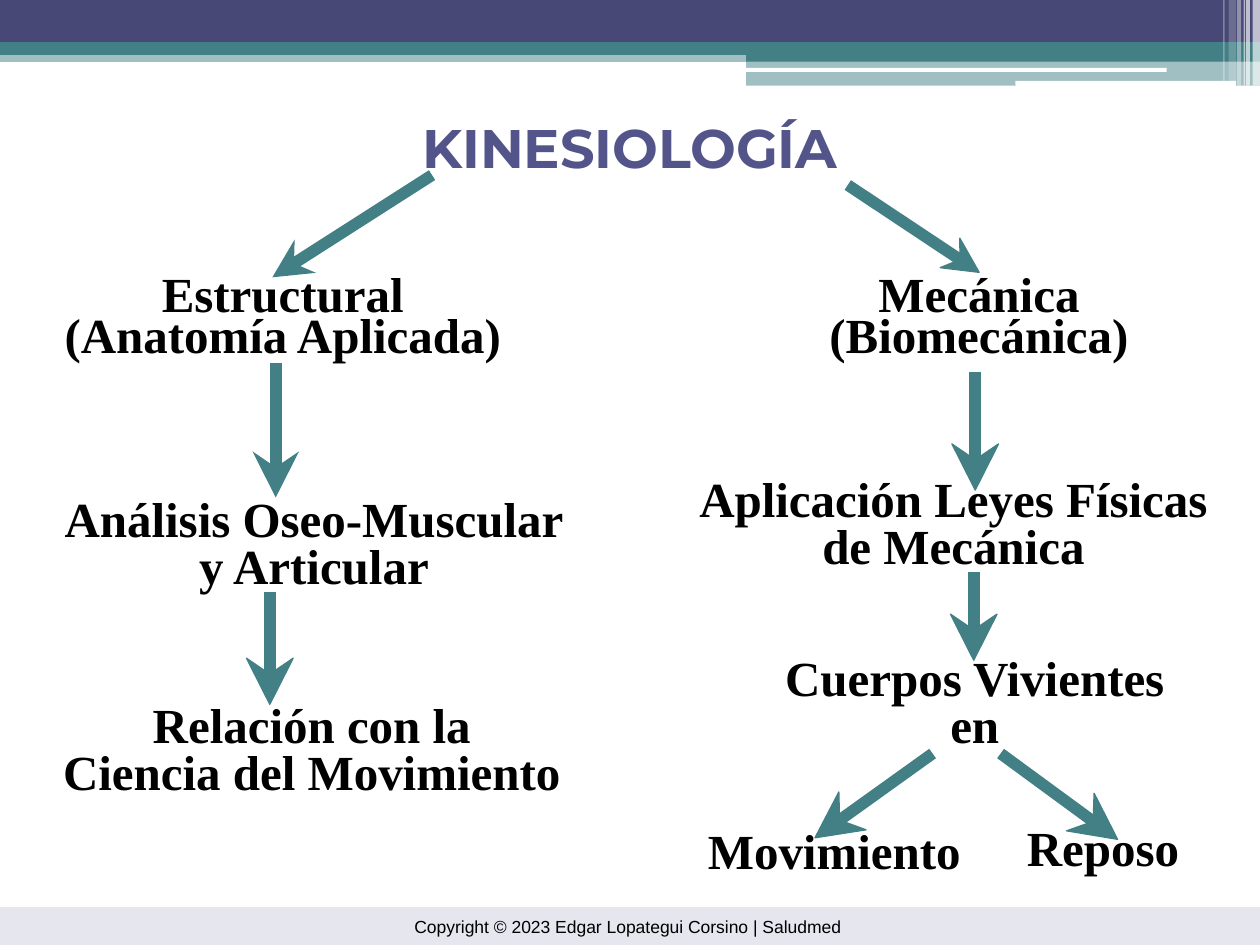
import math
from lxml import etree
from pptx import Presentation
from pptx.dml.color import RGBColor
from pptx.enum import shapes, text
from pptx.oxml.ns import qn
from pptx.util import Cm, Pt

TEAL = RGBColor(0x43, 0x80, 0x86)
NAVY = RGBColor(0x48, 0x48, 0x76)
VIOLET = RGBColor(0x53, 0x54, 0x8A)
LAVENDER = RGBColor(0xE6, 0xE6, 0xEF)
WHITE = RGBColor(0xFF, 0xFF, 0xFF)
BLACK = RGBColor(0, 0, 0)
RECT = shapes.MSO_SHAPE.RECTANGLE
ROUND = shapes.MSO_SHAPE.ROUNDED_RECTANGLE


def add_run(p, words, size, font, color, bold=True):
    r = p.add_run()
    r.text = words
    r.font.size = Pt(size)
    r.font.name = font
    r.font.bold = bold
    r.font.color.rgb = color


def zero_margins(tf):
    tf.margin_left = tf.margin_top = tf.margin_right = tf.margin_bottom = 0
    tf.word_wrap = False
    tf.vertical_anchor = text.MSO_ANCHOR.TOP
    tf.auto_size = text.MSO_AUTO_SIZE.SHAPE_TO_FIT_TEXT


prs = Presentation()
prs.slide_width, prs.slide_height = Cm(25.4), Cm(19.05)
s = prs.slides.add_slide(prs.slide_layouts[5])

bands = [
    (RECT, 0, 1.02, 25.4, 0.23, TEAL, 50),
    (RECT, 0, 0, 25.4, 0.87, NAVY, 100),
    (RECT, 0, 0.85, 25.4, 0.26, TEAL, 100),
    (RECT, 15.04, 0.99, 10.36, 0.25, TEAL, 100),
    (RECT, 15.04, 1.22, 10.36, 0.51, TEAL, 50),
    (ROUND, 15.01, 1.37, 8.51, 0.08, WHITE, 100),
    (ROUND, 20.47, 1.63, 4.45, 0.1, WHITE, 100),
    (RECT, 25.25, 0, 0.15, 1.73, WHITE, 65),
    (RECT, 25.12, 0, 0.08, 1.73, WHITE, 65),
    (RECT, 25.07, 0, 0.03, 1.73, WHITE, 60),
    (RECT, 24.94, 0, 0.08, 1.73, WHITE, 40),
    (RECT, 24.77, 0, 0.15, 1.63, WHITE, 20),
    (RECT, 24.66, 0, 0.03, 1.63, WHITE, 30),
    (RECT, 0, 18.29, 25.4, 0.76, LAVENDER, 100),
]
for kind, left, top, width, height, color, opacity in bands:
    sp = s.shapes.add_shape(kind, Cm(left), Cm(top), Cm(width), Cm(height))
    sp.shadow.inherit = False
    sp.fill.solid()
    sp.fill.fore_color.rgb = color
    sp.line.fill.background()
    if opacity < 100:
        clr = sp.fill._xPr.find(qn("a:solidFill"))[0]
        etree.SubElement(clr, qn("a:alpha")).set("val", str(opacity * 1000))

footer = sp.text_frame
footer.vertical_anchor = text.MSO_ANCHOR.MIDDLE
p = footer.paragraphs[0]
p.alignment = text.PP_ALIGN.CENTER
add_run(p, "Copyright © 2023 Edgar Lopategui Corsino | Saludmed ", 10, "Arial", BLACK, False)

labels = [
    (1.27, 5.64, 8.86, 1.65, 0.7, ["Estructural", "(Anatomía Aplicada)"]),
    (16.71, 5.64, 6.05, 1.65, 0.7, ["Mecánica", "(Biomecánica)"]),
    (1.3, 10.08, 10.06, 1.91, 0.8, ["Análisis Oseo-Muscular", "y Articular"]),
    (1.27, 14.22, 10.03, 1.91, 0.8, ["Relación con la", "Ciencia del Movimiento"]),
    (14, 9.68, 10.44, 1.91, 0.8, ["Aplicación Leyes Físicas", "de Mecánica"]),
    (15.8, 13.28, 7.7, 1.91, 0.8, ["Cuerpos Vivientes", "en"]),
    (14.27, 16.54, 5.11, 1.19, 1.0, ["Movimiento"]),
    (20.7, 16.48, 3.07, 1.19, 1.0, ["Reposo"]),
]
for left, top, width, height, spacing, lines in labels:
    tf = s.shapes.add_textbox(Cm(left), Cm(top), Cm(width), Cm(height)).text_frame
    zero_margins(tf)
    for i, words in enumerate(lines):
        p = tf.add_paragraph() if i else tf.paragraphs[0]
        p.alignment = text.PP_ALIGN.CENTER if len(lines) > 1 else text.PP_ALIGN.LEFT
        p.line_spacing = spacing
        add_run(p, words, 28, "Times New Roman", BLACK)

arrows = [
    (8.71, 3.53, 5.49, 5.59, 0.85, False),
    (5.56, 7.32, 5.56, 10.03, 1, False),
    (5.44, 11.94, 5.44, 14.2, 1, True),
    (19.66, 7.49, 19.66, 9.88, 1, True),
    (19.63, 11.53, 19.63, 13.31, 1, True),
    (18.8, 15.19, 16.43, 16.89, 1, True),
    (20.17, 15.19, 22.53, 16.92, 1, True),
    (17.09, 3.73, 19.74, 5.49, 0.76, True),
]
for x1, y1, x2, y2, scale, outlined in arrows:
    length = math.hypot(x2 - x1, y2 - y1)
    dx, dy = (x2 - x1) / length * scale, (y2 - y1) / length * scale
    notch = Cm(x2 - 0.61 * dx), Cm(y2 - 0.61 * dy)
    barbs = [(Cm(x2 - 0.93 * dx - side * dy), Cm(y2 - 0.93 * dy + side * dx))
             for side in (-0.47, 0.47)]

    shaft = s.shapes.add_connector(shapes.MSO_CONNECTOR.STRAIGHT, Cm(x1), Cm(y1), *notch)
    shaft.line.color.rgb = TEAL
    shaft.line.width = Pt(6.63)
    etree.SubElement(shaft._element.spPr, qn("a:effectLst"))

    fb = s.shapes.build_freeform(*barbs[0])
    fb.add_line_segments([(Cm(x2), Cm(y2)), barbs[1], notch], close=True)
    head = fb.convert_to_shape()
    head.shadow.inherit = False
    head.fill.solid()
    head.fill.fore_color.rgb = TEAL
    if outlined:
        head.line.color.rgb = TEAL
        head.line.width = Pt(0.75)
    else:
        head.line.fill.background()

title = s.shapes.title
title.left, title.top, title.width, title.height = Cm(8.51), Cm(2.31), Cm(9.02), Cm(1.32)
zero_margins(title.text_frame)
p = title.text_frame.paragraphs[0]
p.alignment = text.PP_ALIGN.LEFT
add_run(p, "KINESIOLOGÍA", 31, "Montserrat", VIOLET)

prs.save("out.pptx")
